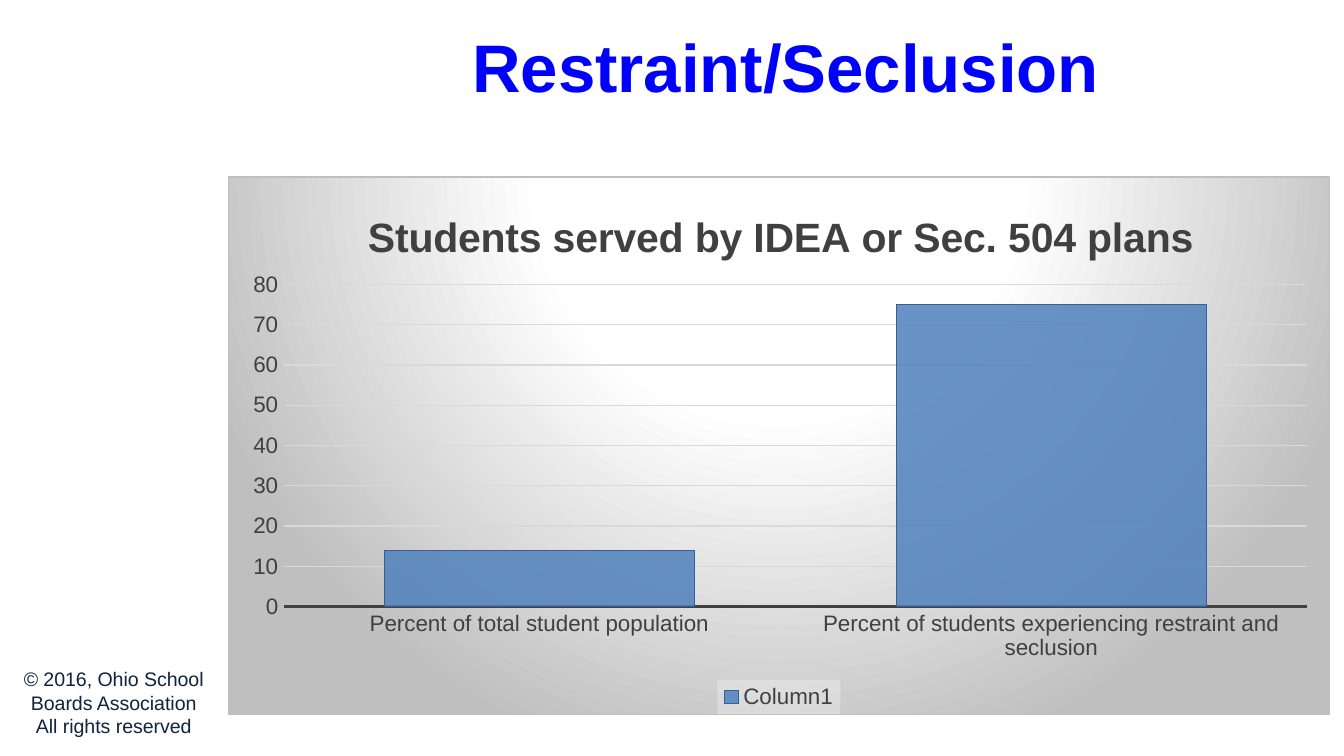
from dataclasses import dataclass

from lxml.etree import SubElement
from pptx import Presentation
from pptx.chart.data import CategoryChartData
from pptx.dml.color import RGBColor
from pptx.enum.chart import XL_CHART_TYPE, XL_LEGEND_POSITION, XL_TICK_MARK
from pptx.enum.text import MSO_ANCHOR, MSO_AUTO_SIZE, PP_ALIGN
from pptx.oxml import parse_xml
from pptx.oxml.ns import nsdecls, qn
from pptx.util import Pt


@dataclass(frozen=True)
class Theme:
    font: str = "Arial"
    heading: str = "0000FF"
    copyright: str = "0F243E"
    chart_text: str = "404040"
    grid: str = "D9D9D9"
    panel: str = "FFFFFF"
    panel_edge: str = "BFBFBF"
    legend: str = "F2F2F2"
    bar: str = "4F81BD"
    bar_edge: str = "376092"
    heading_size: float = 36
    chart_title_size: float = 22
    label_size: float = 12
    copyright_size: float = 10.5


THEME = Theme()


@dataclass(frozen=True)
class Box:
    left: float
    top: float
    width: float
    height: float

    def lengths(self):
        return Pt(self.left), Pt(self.top), Pt(self.width), Pt(self.height)


def style_font(font, size, color, bold=False):
    font.name = THEME.font
    font.size = Pt(size)
    font.bold = bold
    font.color.rgb = RGBColor.from_string(color)


def style_line(line, color, width):
    line.color.rgb = RGBColor.from_string(color)
    line.width = Pt(width)


def add_text(slide, box, lines, size, color, bold=False):
    """Add centred paragraphs and return their text frame."""
    text_frame = slide.shapes.add_textbox(*box.lengths()).text_frame
    text_frame.word_wrap = True
    text_frame.text = "\n".join(lines)
    for paragraph in text_frame.paragraphs:
        paragraph.alignment = PP_ALIGN.CENTER
        for run in paragraph.runs:
            style_font(run.font, size, color, bold)
    return text_frame


def add_heading(slide, box):
    text_frame = add_text(slide, box, ["Restraint/Seclusion"],
                          THEME.heading_size, THEME.heading, bold=True)
    text_frame.vertical_anchor = MSO_ANCHOR.MIDDLE


def add_copyright(slide, box):
    lines = ["© 2016, Ohio School Boards Association", "All rights reserved"]
    text_frame = add_text(slide, box, lines, THEME.copyright_size, THEME.copyright)
    text_frame.auto_size = MSO_AUTO_SIZE.SHAPE_TO_FIT_TEXT


def set_layout(element, **fractions):
    """Place a chart part by fractions of the chart's size."""
    for layout in element.findall(qn("c:layout")):
        element.remove(layout)
    target = '<c:layoutTarget val="inner"/>' if "w" in fractions else ""
    modes = "".join(f'<c:{key}Mode val="edge"/>' for key in "xy")
    values = "".join(f'<c:{key} val="{value}"/>' for key, value in fractions.items())
    layout = parse_xml(f'<c:layout {nsdecls("c")}><c:manualLayout>{target}{modes}'
                       f'{values}</c:manualLayout></c:layout>')
    text = element.find(qn("c:tx"))
    element.insert(0 if text is None else 1, layout)


def shape_properties(content):
    return parse_xml(f'<c:spPr {nsdecls("c", "a")}>{content}</c:spPr>')


def fill_panel(chart):
    stops = [(0, THEME.panel), (39, THEME.panel), (100, THEME.panel_edge)]
    stop_xml = "".join(f'<a:gs pos="{position * 1000}"><a:srgbClr val="{color}"/></a:gs>'
                       for position, color in stops)
    properties = shape_properties(
        f'<a:gradFill><a:gsLst>{stop_xml}</a:gsLst><a:path path="circle">'
        '<a:fillToRect l="50000" t="-80000" r="50000" b="180000"/></a:path></a:gradFill>'
        f'<a:ln w="{Pt(0.75)}"><a:solidFill><a:srgbClr val="{THEME.panel_edge}"/>'
        '</a:solidFill></a:ln>')
    chart.element.find(qn("c:chart")).addnext(properties)


def style_axes(chart):
    for axis in (chart.category_axis, chart.value_axis):
        axis.major_tick_mark = axis.minor_tick_mark = XL_TICK_MARK.NONE
        style_font(axis.tick_labels.font, THEME.label_size, THEME.chart_text)
    style_line(chart.category_axis.format.line, THEME.chart_text, 1.5)
    value_axis = chart.value_axis
    value_axis.minimum_scale, value_axis.maximum_scale = 0, 80
    value_axis.major_unit = 10
    value_axis.format.line.fill.background()
    style_line(value_axis.major_gridlines.format.line, THEME.grid, 0.75)


def style_bars(chart):
    plot = chart.plots[0]
    plot.gap_width = 65
    plot.vary_by_categories = False
    bars = plot.series[0].format
    bars.fill.solid()
    bars.fill.fore_color.rgb = RGBColor.from_string(THEME.bar)
    style_line(bars.line, THEME.bar_edge, 0.75)
    color = plot.series[0]._element.find(f'{qn("c:spPr")}/{qn("a:solidFill")}/{qn("a:srgbClr")}')
    SubElement(color, qn("a:alpha")).set("val", "85000")


def add_legend(chart):
    chart.has_legend = True
    legend = chart.legend
    legend.position = XL_LEGEND_POSITION.BOTTOM
    legend.include_in_layout = False
    style_font(legend.font, THEME.label_size, THEME.chart_text)
    properties = shape_properties(f'<a:solidFill><a:srgbClr val="{THEME.legend}">'
                                  '<a:alpha val="39000"/></a:srgbClr></a:solidFill>')
    legend._element.find(qn("c:txPr")).addprevious(properties)


def add_student_chart(slide, box):
    data = CategoryChartData()
    data.categories = ["Percent of total student population",
                       "Percent of students experiencing restraint and seclusion"]
    data.add_series("Column1", (14, 75))
    chart = slide.shapes.add_chart(XL_CHART_TYPE.COLUMN_CLUSTERED, *box.lengths(), data).chart
    style_font(chart.font, THEME.label_size, THEME.chart_text)

    # Chart title
    chart.has_title = True
    text_frame = chart.chart_title.text_frame
    text_frame.text = "Students served by IDEA or Sec. 504 plans"
    style_font(text_frame.paragraphs[0].runs[0].font,
               THEME.chart_title_size, THEME.chart_text, bold=True)
    set_layout(chart.chart_title._element, x=0.12, y=0.05)

    # Panel, plot and legend
    fill_panel(chart)
    style_axes(chart)
    style_bars(chart)
    add_legend(chart)
    set_layout(chart.element.find(f'{qn("c:chart")}/{qn("c:plotArea")}'),
               x=0.05, y=0.2, w=0.93, h=0.6)


def main():
    presentation = Presentation()
    presentation.slide_width, presentation.slide_height = Pt(720), Pt(405)
    slide = presentation.slides.add_slide(presentation.slide_layouts[6])
    sidebar = 122
    add_copyright(slide, Box(0, 354, sidebar, 45))
    add_heading(slide, Box(sidebar, 0, 720 - sidebar, 70.5))
    add_student_chart(slide, Box(sidebar, 94.5, 590.5, 288.5))
    presentation.save("out.pptx")


if __name__ == "__main__":
    main()
